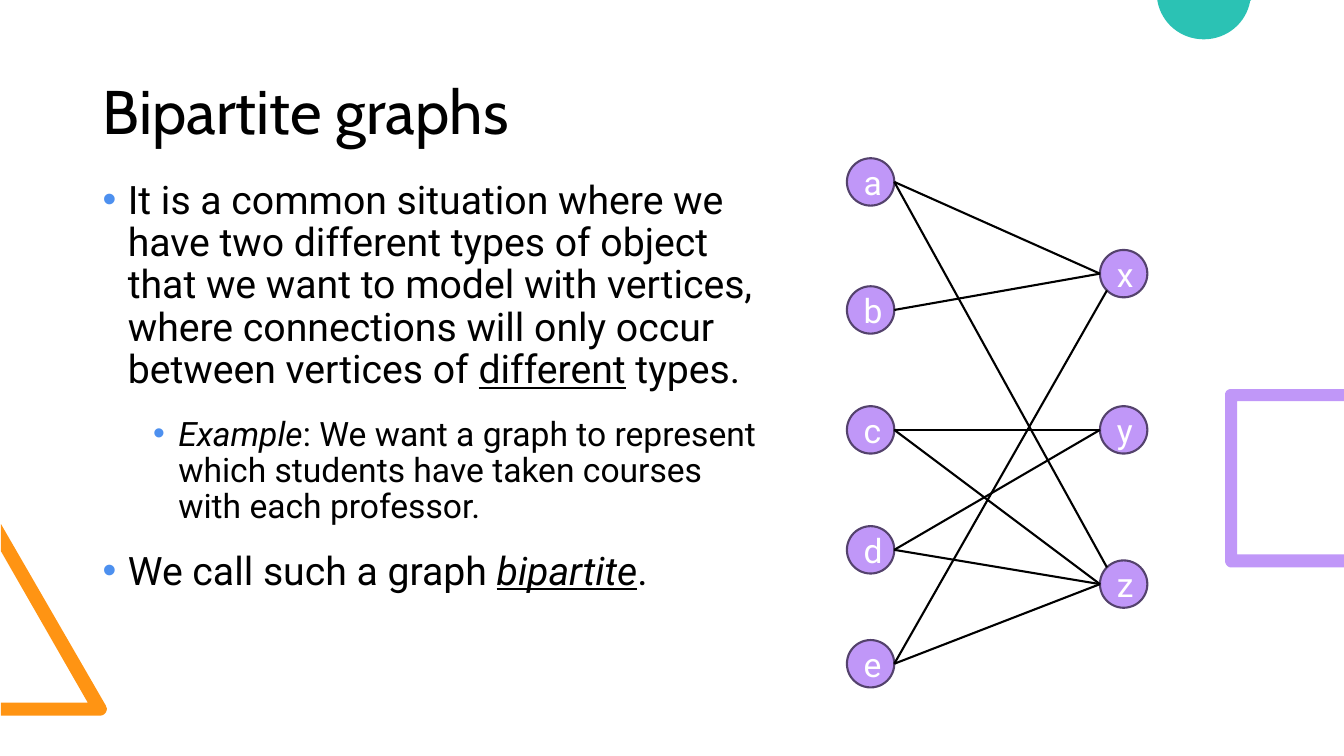
"""Build the "Bipartite graphs" slide."""
from dataclasses import dataclass
from math import sqrt

from lxml.etree import SubElement
from pptx import Presentation
from pptx.dml.color import RGBColor
from pptx.enum.shapes import MSO_CONNECTOR as CONN, MSO_SHAPE as SHAPE
from pptx.enum.text import MSO_ANCHOR as ANCHOR, PP_ALIGN as ALIGN
from pptx.oxml.ns import qn
from pptx.util import Inches, Pt

BLACK, WHITE, PURPLE = "000000", "FFFFFF", "C097F8"
DIAMETER = 0.47
LEFT_X, RIGHT_X = 8.4, 10.91


@dataclass
class Run:
    text: str
    italic: bool = False
    underline: bool = False


@dataclass
class Bullet:
    runs: list[Run]
    size: int = 28
    level: int = 0


@dataclass
class Vertex:
    label: str
    left: float
    top: float


@dataclass
class Outline:
    color: str
    start: tuple[float, float]
    steps: list[tuple[float, ...]]


BULLETS = [
    Bullet([
        Run("It is a common situation where we have two different types of object that we "
            "want to model with vertices, where connections will only occur between "
            "vertices of "),
        Run("different", underline=True),
        Run(" types."),
    ]),
    Bullet([
        Run("Example", italic=True),
        Run(": We want a graph to represent which students have taken courses with each "
            "professor."),
    ], size=24, level=1),
    Bullet([
        Run("We call such a graph "),
        Run("bipartite", italic=True, underline=True),
        Run("."),
    ]),
]

VERTICES = [
    *(Vertex(label, LEFT_X, top)
      for label, top in zip("abcde", (1.57, 2.84, 4.03, 5.22, 6.35))),
    *(Vertex(label, RIGHT_X, top) for label, top in zip("xyz", (2.48, 4.03, 5.56))),
]
EDGES = ["ax", "az", "bx", "cy", "cz", "dy", "dz", "ex", "ez"]
CORNER_SIDES = {"az": -1, "ex": 1}

OUTLINES = [
    Outline("FF9413", (0.01, 7.1), [
        (0.01, 6.97), (0.87, 6.97), (0.01, 5.47), (0.01, 5.2), (1.05, 7),
        (1.05, 7.01, 1.06, 7.02, 1.06, 7.03), (1.06, 7.07, 1.03, 7.1, 0.99, 7.1)]),
    Outline("2BC2B4", (11.48, 0), [
        (12.41, 0), (12.4, 0.01), (12.36, 0.23, 12.17, 0.39, 11.94, 0.39),
        (11.71, 0.39, 11.52, 0.23, 11.48, 0.01)]),
    Outline(PURPLE, (12.21, 5.63), [
        (13.33, 5.63), (13.33, 5.5), (12.27, 5.5), (12.27, 3.98), (13.33, 3.98),
        (13.33, 3.86), (12.21, 3.86), (12.18, 3.86, 12.15, 3.88, 12.15, 3.92),
        (12.15, 5.56), (12.15, 5.6, 12.18, 5.63, 12.21, 5.63)]),
]


def rgb(color: str) -> RGBColor:
    return RGBColor.from_string(color)


def add_run(p, run: Run, size: int, font: str, color: str) -> None:
    r = p.add_run()
    r.text = run.text
    r.font.name, r.font.size = font, Pt(size)
    r.font.italic, r.font.underline = run.italic, run.underline
    r.font.color.rgb = rgb(color)


def flatten(outline: Outline, samples: int = 16) -> list[tuple[float, float]]:
    points = [outline.start]
    for step in outline.steps:
        if len(step) == 2:
            points.append(step)
            continue
        x0, y0 = points[-1]
        x1, y1, x2, y2, x3, y3 = step
        for i in range(1, samples + 1):
            t = i / samples
            u = 1 - t
            a, b, c, d = u**3, 3 * u * u * t, 3 * u * t * t, t**3
            points.append((a * x0 + b * x1 + c * x2 + d * x3,
                           a * y0 + b * y1 + c * y2 + d * y3))
    return points


def add_outline(shapes, outline: Outline) -> None:
    first, *rest = [(Inches(x), Inches(y)) for x, y in flatten(outline)]
    builder = shapes.build_freeform(*first)
    builder.add_line_segments(rest, close=True)
    sp = builder.convert_to_shape()
    sp.shadow.inherit = False
    sp.fill.solid()
    sp.fill.fore_color.rgb = rgb(outline.color)
    sp.line.fill.background()


def add_title(sp) -> None:
    sp.left, sp.top, sp.width, sp.height = map(Inches, (0.92, 0.33, 11.5, 1.61))
    tf = sp.text_frame
    tf.vertical_anchor = ANCHOR.MIDDLE
    p = tf.paragraphs[0]
    p.alignment, p.line_spacing = ALIGN.LEFT, 0.9
    add_run(p, Run("Bipartite graphs"), 44, "Cabin", BLACK)


def add_bullets(shapes, bullets: list[Bullet]) -> None:
    tf = shapes.add_textbox(*map(Inches, (0.92, 1.74, 6.84, 5.58))).text_frame
    tf.word_wrap = True
    for i, bullet in enumerate(bullets):
        p = tf.add_paragraph() if i else tf.paragraphs[0]
        p.level, p.line_spacing = bullet.level, 0.9
        p.space_before, p.space_after = Pt(10), Pt(8)
        pPr = p._p.get_or_add_pPr()
        pPr.set("marL", str(Inches(0.25 + 0.5 * bullet.level)))
        pPr.set("indent", str(Inches(-0.25)))
        SubElement(SubElement(pPr, qn("a:buClr")), qn("a:srgbClr"), val="4D90EF")
        SubElement(pPr, qn("a:buFont"), typeface="Arial")
        SubElement(pPr, qn("a:buChar"), char="•")
        for run in bullet.runs:
            add_run(p, run, bullet.size, "Roboto", BLACK)


def add_vertex(shapes, vertex: Vertex) -> None:
    sp = shapes.add_shape(SHAPE.OVAL, *map(Inches, (vertex.left, vertex.top,
                                                  DIAMETER, DIAMETER)))
    sp.shadow.inherit = False
    sp.fill.solid()
    sp.fill.fore_color.rgb = rgb(PURPLE)
    sp.line.color.rgb, sp.line.width = rgb("54426D"), Pt(1.5)
    tf = sp.text_frame
    tf.vertical_anchor = ANCHOR.MIDDLE
    p = tf.paragraphs[0]
    p.alignment = ALIGN.CENTER
    add_run(p, Run(vertex.label), 24, "Roboto", WHITE)


def add_edge(shapes, start: Vertex, end: Vertex, corner: int) -> None:
    radius = DIAMETER / 2
    reach = radius / sqrt(2)
    x = end.left + (radius - reach if corner else 0)
    y = end.top + radius + corner * reach
    line = shapes.add_connector(CONN.STRAIGHT, *map(Inches, (
        start.left + DIAMETER, start.top + radius, x, y)))
    line.line.color.rgb, line.line.width = rgb(BLACK), Pt(1.5)
    SubElement(line._element.spPr, qn("a:effectLst"))


def main() -> None:
    prs = Presentation()
    prs.slide_width, prs.slide_height = Inches(13.33), Inches(7.5)
    slide = prs.slides.add_slide(prs.slide_layouts[5])
    shapes = slide.shapes
    for outline in OUTLINES:
        add_outline(shapes, outline)
    add_title(shapes.title)
    add_bullets(shapes, BULLETS)
    for vertex in VERTICES:
        add_vertex(shapes, vertex)
    by_label = {vertex.label: vertex for vertex in VERTICES}
    for edge in EDGES:
        start, end = edge
        add_edge(shapes, by_label[start], by_label[end], CORNER_SIDES.get(edge, 0))
    prs.save("out.pptx")


if __name__ == "__main__":
    main()
